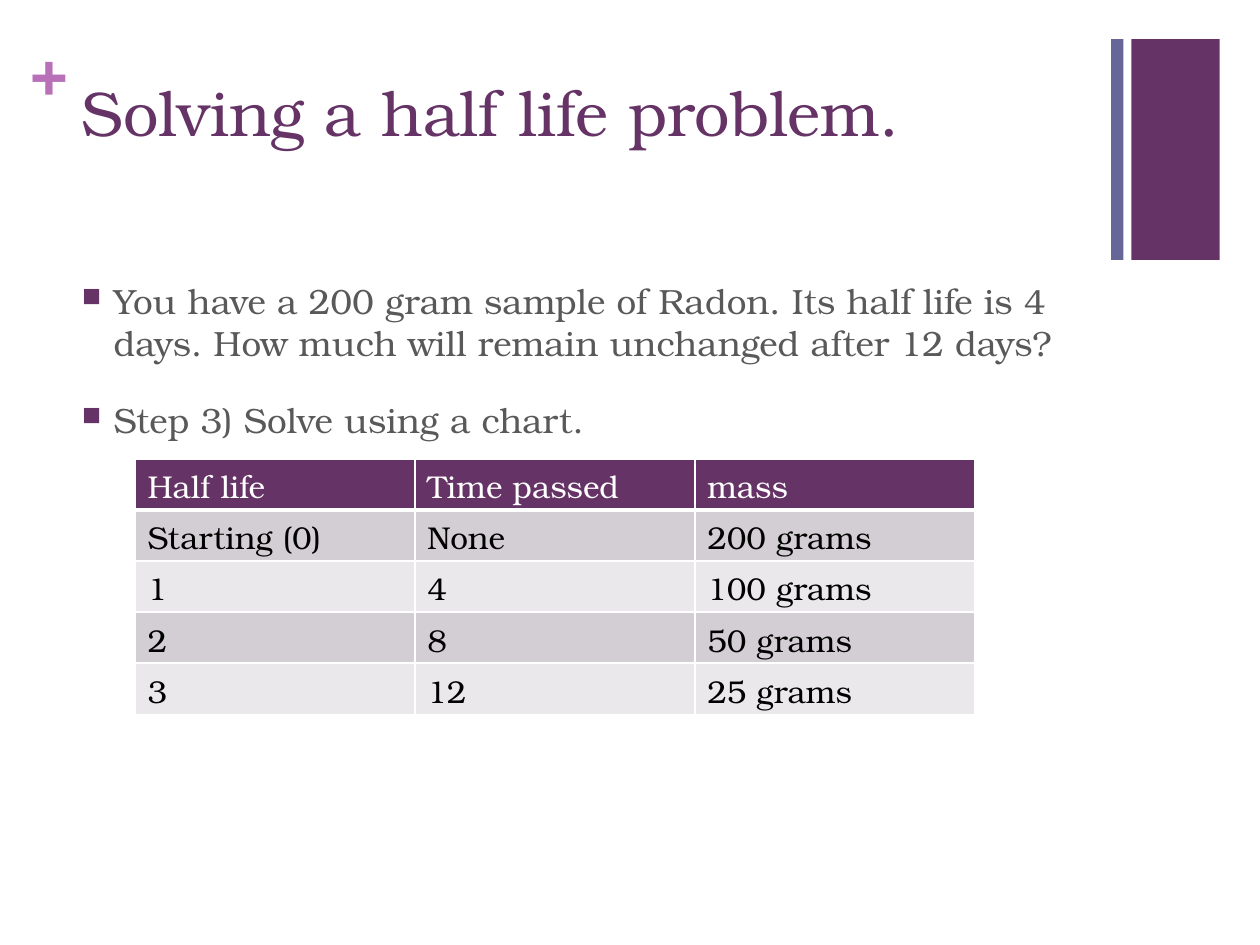
from pptx import Presentation
from pptx.dml.color import RGBColor
from pptx.enum.shapes import MSO_SHAPE
from pptx.oxml import parse_xml
from pptx.oxml.ns import nsdecls
from pptx.util import Cm, Pt

PURPLE = "663366"
FONT = "TeX Gyre Bonum"


def rgb(color):
    return RGBColor.from_string(color)


def format_runs(tf, size, color, bold=False):
    for p in tf.paragraphs:
        for r in p.runs:
            r.font.name = FONT
            r.font.size = Pt(size)
            r.font.bold = bold
            r.font.color.rgb = rgb(color)


prs = Presentation()
prs.slide_width, prs.slide_height = Cm(25.4), Cm(19.05)
s = prs.slides.add_slide(prs.slide_layouts[6])

# Corner bars
for left, width, color in [(22.81, 1.78, PURPLE), (22.4, 0.25, "666699")]:
    sp = s.shapes.add_shape(MSO_SHAPE.RECTANGLE, Cm(left), Cm(0.79), Cm(width), Cm(4.45))
    sp.shadow.inherit = False
    sp.fill.solid()
    sp.fill.fore_color.rgb = rgb(color)
    sp.line.fill.background()

# Plus sign
tf = s.shapes.add_textbox(Cm(0.61), Cm(0.64), Cm(0.74), Cm(1.55)).text_frame
tf.margin_left = tf.margin_top = tf.margin_right = tf.margin_bottom = 0
tf.text = "+"
format_runs(tf, 36, "B870B8", bold=True)

# Title
tf = s.shapes.add_textbox(Cm(1.4), Cm(1.35), Cm(20.98), Cm(3.1)).text_frame
tf.word_wrap = True
tf.text = "Solving a half life problem."
format_runs(tf, 36, PURPLE)

# Bulleted problem
tf = s.shapes.add_textbox(Cm(1.4), Cm(5.51), Cm(20.98), Cm(11.51)).text_frame
tf.word_wrap = True
tf.text = (
    "You have a 200 gram sample of Radon. Its half life is 4 days. "
    "How much will remain unchanged after 12 days?\n"
    "Step 3) Solve using a chart."
)
format_runs(tf, 20, "595959")
for p in tf.paragraphs:
    p.space_before = Pt(20)
    pPr = p._p.get_or_add_pPr()
    pPr.set("marL", str(Cm(0.64)))
    pPr.set("indent", str(-Cm(0.64)))
    for bullet in (
        f'<a:buClr {nsdecls("a")}><a:srgbClr val="{PURPLE}"/></a:buClr>',
        f'<a:buSzPct {nsdecls("a")} val="75000"/>',
        f'<a:buChar {nsdecls("a")} char="■"/>',
    ):
        pPr.append(parse_xml(bullet))

# Half life table
rows = [
    ("Half life", "Time passed", "mass"),
    ("Starting (0)", "None", "200 grams"),
    ("1", "4", "100 grams"),
    ("2", "8", "50 grams"),
    ("3", "12", "25 grams"),
]
table = s.shapes.add_table(
    len(rows), 3, Cm(2.72), Cm(9.25), Cm(16.93), Cm(1.03 * len(rows))
).table
for i, row in enumerate(rows):
    header = i == 0
    fill = PURPLE if header else ("EAE8EA", "D3CED3")[i % 2]
    for j, text in enumerate(row):
        cell = table.cell(i, j)
        cell.text = text
        format_runs(cell.text_frame, 18, "FFFFFF" if header else "000000")
        tcPr = cell._tc.get_or_add_tcPr()
        for side in "LRTB":
            width = Pt(3 if header and side == "B" else 1)
            tcPr.append(parse_xml(
                f'<a:ln{side} {nsdecls("a")} w="{width}"><a:solidFill>'
                f'<a:srgbClr val="FFFFFF"/></a:solidFill></a:ln{side}>'
            ))
        cell.fill.solid()
        cell.fill.fore_color.rgb = rgb(fill)

prs.save("out.pptx")
